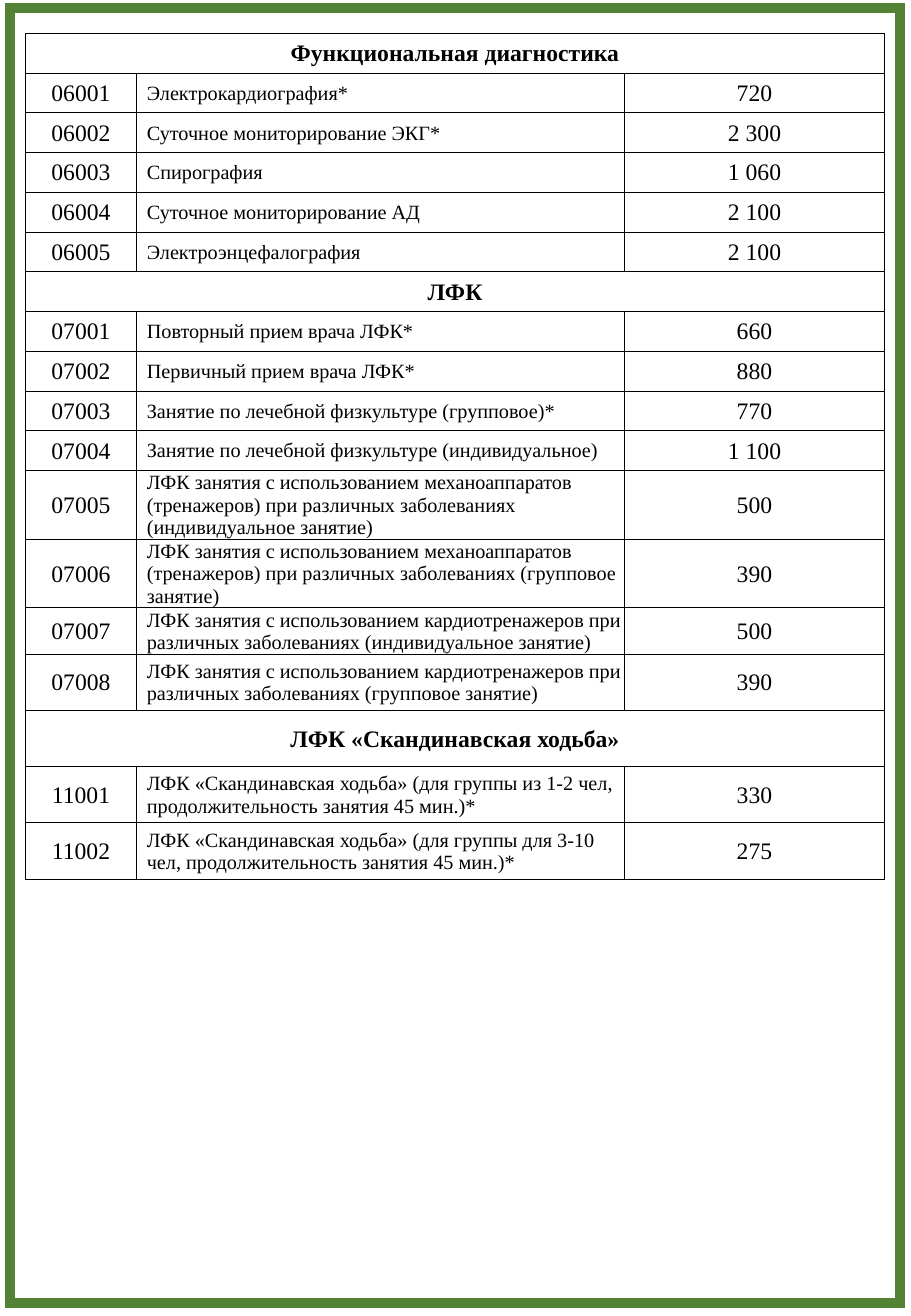
"""Build a one-page price list of diagnostic and exercise therapy services."""
from pptx import Presentation
from pptx.dml.color import RGBColor
from pptx.enum.shapes import MSO_SHAPE as SHAPE
from pptx.enum.text import MSO_ANCHOR as ANCHOR, PP_ALIGN as ALIGN
from pptx.oxml import parse_xml
from pptx.oxml.ns import nsdecls
from pptx.util import Pt

GREEN = RGBColor(0x54, 0x82, 0x35)
BLACK = RGBColor(0, 0, 0)
FONT = "Times New Roman"
SECTIONS = [
    ("Функциональная диагностика", [
        ("06001", "Электрокардиография*", "720"),
        ("06002", "Суточное мониторирование ЭКГ*", "2 300"),
        ("06003", "Спирография", "1 060"),
        ("06004", "Суточное мониторирование АД", "2 100"),
        ("06005", "Электроэнцефалография", "2 100"),
    ]),
    ("ЛФК", [
        ("07001", "Повторный прием врача ЛФК*", "660"),
        ("07002", "Первичный прием врача ЛФК*", "880"),
        ("07003", "Занятие по лечебной физкультуре (групповое)*", "770"),
        ("07004", "Занятие по лечебной физкультуре (индивидуальное)", "1 100"),
        ("07005", "ЛФК занятия с использованием механоаппаратов (тренажеров) "
                  "при различных заболеваниях (индивидуальное занятие)", "500"),
        ("07006", "ЛФК занятия с использованием механоаппаратов (тренажеров) "
                  "при различных заболеваниях (групповое занятие)", "390"),
        ("07007", "ЛФК занятия с использованием кардиотренажеров "
                  "при различных заболеваниях (индивидуальное занятие)", "500"),
        ("07008", "ЛФК занятия с использованием кардиотренажеров "
                  "при различных заболеваниях (групповое занятие)", "390"),
    ]),
    ("ЛФК «Скандинавская ходьба»", [
        ("11001", "ЛФК «Скандинавская ходьба» (для группы из 1-2 чел, "
                  "продолжительность занятия 45 мин.)*", "330"),
        ("11002", "ЛФК «Скандинавская ходьба» (для группы для 3-10 чел, "
                  "продолжительность занятия 45 мин.)*", "275"),
    ]),
]
COL_WIDTHS = [65.8, 289.2, 154.3]
ROW_HEIGHTS = [23.58] * 14 + [33.35] * 4


def add_borders(cell):
    tc_pr = cell._tc.get_or_add_tcPr()
    for side in ("lnL", "lnR", "lnT", "lnB"):
        tc_pr.append(parse_xml(
            f'<a:{side} {nsdecls("a")} w="{Pt(0.5)}"><a:solidFill>'
            f'<a:srgbClr val="{BLACK}"/></a:solidFill></a:{side}>'))


def fill_cell(cell, text, size=14, bold=False, align=ALIGN.CENTER):
    cell.text_frame.text = text
    p = cell.text_frame.paragraphs[0]
    p.alignment = align
    if align == ALIGN.LEFT:
        p._p.get_or_add_pPr().set("marL", str(Pt(5.4)))
    font = p.runs[0].font
    font.name, font.size, font.bold = FONT, Pt(size), bold
    font.color.rgb = BLACK


prs = Presentation()
prs.slide_width, prs.slide_height = Pt(540), Pt(780)
layout = prs.slide_layouts[6]
for placeholder in list(layout.placeholders):
    layout.shapes._spTree.remove(placeholder._element)
s = prs.slides.add_slide(layout)

border = s.shapes.add_shape(SHAPE.RECTANGLE, Pt(5.8), Pt(4.9), Pt(527.8), Pt(767.5))
border.shadow.inherit = False
border.fill.background()
border.line.color.rgb = GREEN
border.line.width = Pt(6)
border.line._get_or_add_ln().append(
    parse_xml(f'<a:miter {nsdecls("a")} lim="800000"/>'))

frame = s.shapes.add_table(len(ROW_HEIGHTS), len(COL_WIDTHS),
                           Pt(15.1), Pt(19.7), Pt(509.3), Pt(463.5))
table = frame.table
table.first_row = table.horz_banding = False
for column, width in zip(table.columns, COL_WIDTHS):
    column.width = Pt(width)
for row, height in zip(table.rows, ROW_HEIGHTS):
    row.height = Pt(height)
frame.height = Pt(510.5)
for cell in table.iter_cells():
    cell.vertical_anchor = ANCHOR.MIDDLE
    cell.margin_left = cell.margin_right = cell.margin_top = Pt(0.75)
    cell.margin_bottom = 0
    add_borders(cell)
    cell.fill.background()

row = 0
for heading, services in SECTIONS:
    table.cell(row, 0).merge(table.cell(row, 2))
    fill_cell(table.cell(row, 0), heading, bold=True)
    for row, (code, service, price) in enumerate(services, row + 1):
        fill_cell(table.cell(row, 0), code)
        fill_cell(table.cell(row, 1), service, size=12, align=ALIGN.LEFT)
        fill_cell(table.cell(row, 2), price)
    row += 1

prs.save("out.pptx")
